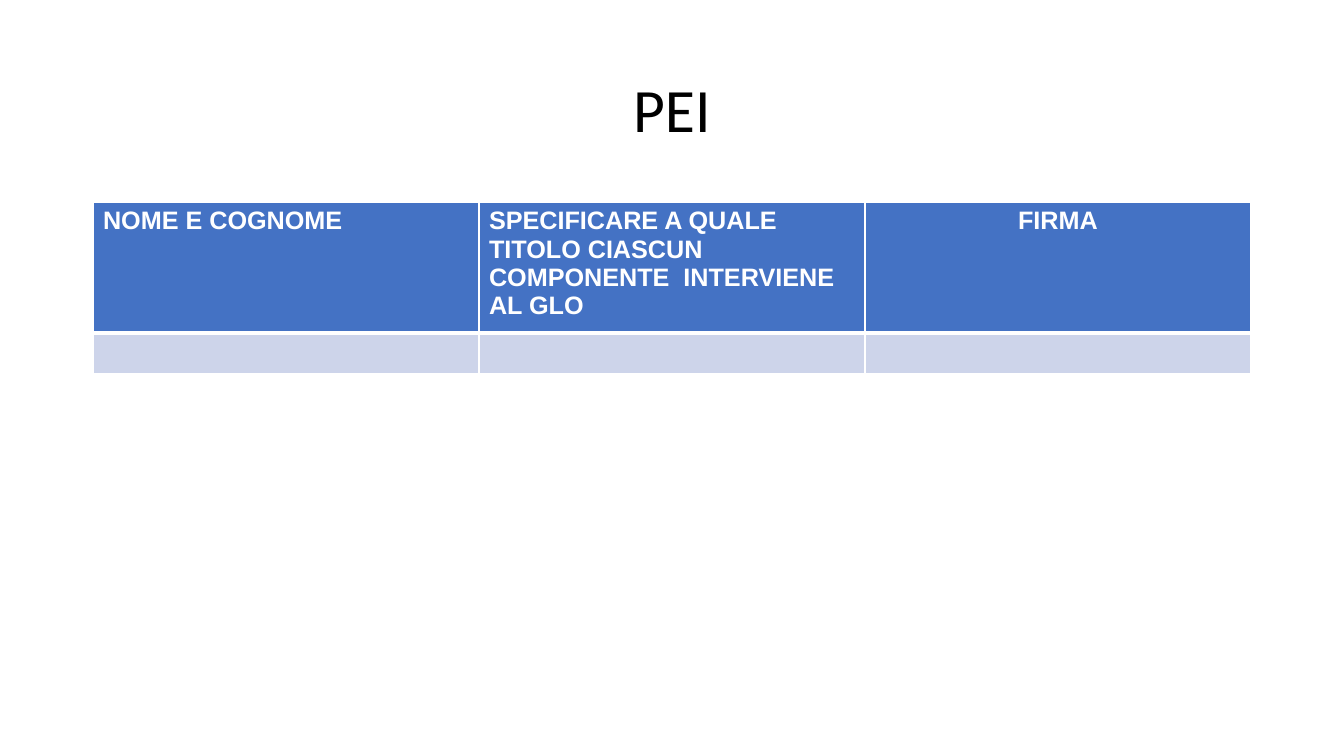
from dataclasses import dataclass

from lxml import etree
from pptx import Presentation
from pptx import util as u
from pptx.dml.color import RGBColor
from pptx.enum import text
from pptx.oxml import ns

# Content
TITLE = "PEI"
LEFT, CENTER = text.PP_ALIGN.LEFT, text.PP_ALIGN.CENTER
HEADERS = [
    ("NOME E COGNOME", LEFT),
    ("SPECIFICARE A QUALE TITOLO CIASCUN COMPONENTE  INTERVIENE AL GLO", LEFT),
    ("FIRMA", CENTER),
]
EMPTY_ROWS = 1

# Layout in px; the header row grows to fit its text
PAGE_W, PAGE_H = 1344, 756
MARGIN = 93
CONTENT_W = PAGE_W - 2 * MARGIN
TITLE_Y, TITLE_H = 40, 146
TABLE_Y, ROW_H = 202, 41


@dataclass(frozen=True)
class Theme:
    title_font: str = "Calibri"
    table_font: str = "Arial"
    title_size: int = 44
    table_size: int = 18
    ink: str = "000000"
    header_ink: str = "FFFFFF"
    header_fill: str = "4472C4"
    row_fill: str = "CDD4EA"
    rule: str = "FFFFFF"
    thin: int = 1
    thick: int = 3


THEME = Theme()


def px(length):
    return u.Emu(round(length * u.Inches(1) / 100.8))


def add_run(para, words, font, size, color, bold=False):
    span = para.add_run()
    span.text = words
    span.font.name = font
    span.font.size = u.Pt(size)
    span.font.bold = bold
    span.font.color.rgb = RGBColor.from_string(color)


def style_cell(cell, fill, bottom):
    # Borders come before the fill in the cell properties
    properties = cell._tc.get_or_add_tcPr()
    widths = {"L": THEME.thin, "R": THEME.thin, "T": THEME.thin, "B": bottom}
    for side, width in widths.items():
        line = etree.SubElement(properties, ns.qn(f"a:ln{side}"), w=str(u.Pt(width)))
        solid = etree.SubElement(line, ns.qn("a:solidFill"))
        etree.SubElement(solid, ns.qn("a:srgbClr"), val=THEME.rule)
    cell.fill.solid()
    cell.fill.fore_color.rgb = RGBColor.from_string(fill)


def add_title(page):
    box = page.shapes.add_textbox(px(MARGIN), px(TITLE_Y), px(CONTENT_W), px(TITLE_H))
    frame = box.text_frame
    frame.word_wrap = True
    frame.vertical_anchor = text.MSO_ANCHOR.MIDDLE
    para = frame.paragraphs[0]
    para.alignment = CENTER
    para.line_spacing = 0.9
    add_run(para, TITLE, THEME.title_font, THEME.title_size, THEME.ink)


def add_signature_table(page):
    rows, columns = 1 + EMPTY_ROWS, len(HEADERS)
    table = page.shapes.add_table(
        rows, columns, px(MARGIN), px(TABLE_Y), px(CONTENT_W), px(rows * ROW_H)
    ).table
    for row in table.rows:
        row.height = px(ROW_H)

    for column, (label, alignment) in enumerate(HEADERS):
        table.columns[column].width = px(CONTENT_W / columns)
        # Header cell
        header = table.cell(0, column)
        style_cell(header, THEME.header_fill, THEME.thick)
        para = header.text_frame.paragraphs[0]
        para.alignment = alignment
        add_run(para, label, THEME.table_font, THEME.table_size, THEME.header_ink, True)
        # Blank cells to fill in
        for row in range(1, rows):
            style_cell(table.cell(row, column), THEME.row_fill, THEME.thin)


def main():
    deck = Presentation()
    deck.slide_width, deck.slide_height = px(PAGE_W), px(PAGE_H)
    page = deck.slides.add_slide(deck.slide_layouts[6])
    add_title(page)
    add_signature_table(page)
    deck.save("out.pptx")


if __name__ == "__main__":
    main()
